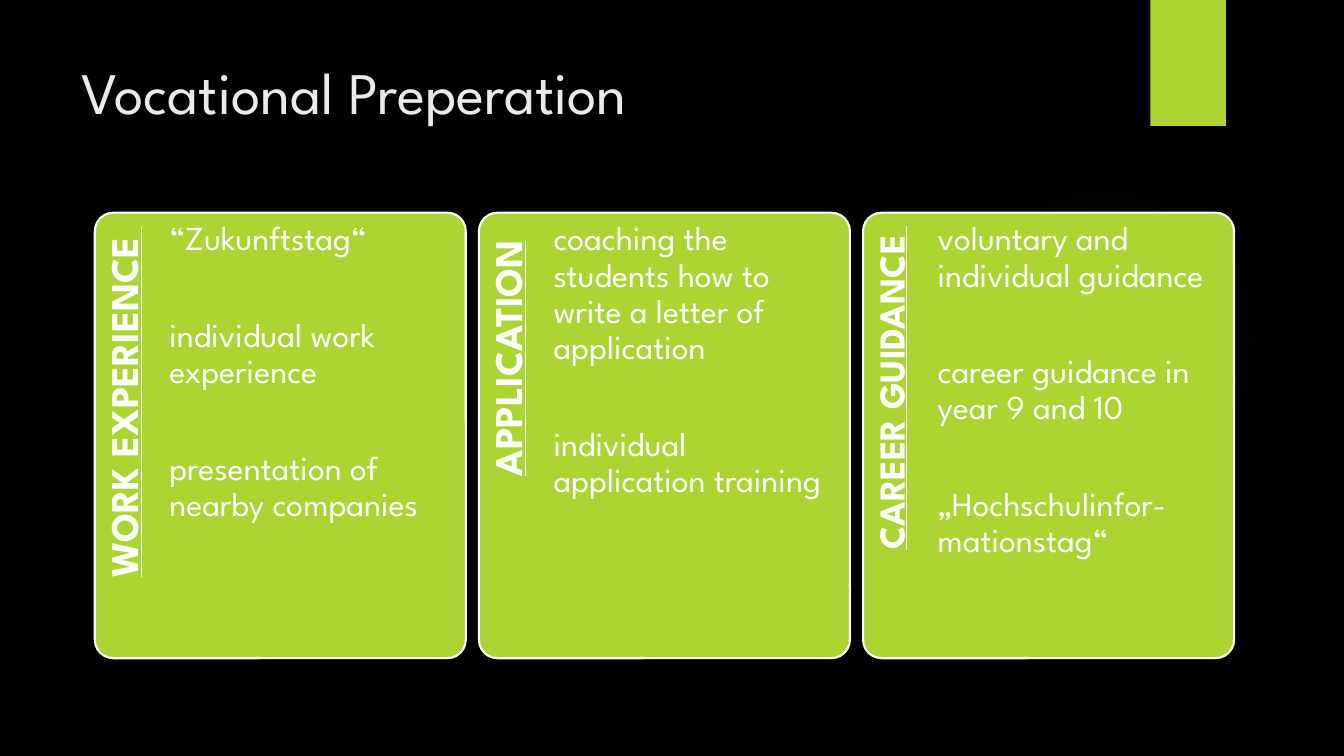
from pptx import Presentation
from pptx.dml.color import RGBColor
from pptx.enum.shapes import MSO_SHAPE as Shape
from pptx.enum.text import MSO_ANCHOR as Anchor, MSO_AUTO_SIZE as AutoSize, PP_ALIGN as Align
from pptx.oxml import parse_xml
from pptx.oxml.ns import nsdecls
from pptx.util import Inches, Pt

FONT = "League Spartan"
COLORS = {
    "background": "000000",
    "green": "ACD433",
    "white": "FFFFFF",
    "title": "EBEBEB",
    "glow": "7AC4F0",
}

# Card grid, in inches
GRID_LEFT, GRID_TOP = 0.94, 2.11
COLUMN_STEP = 3.81
CARD_WIDTH, CARD_HEIGHT = 3.68, 4.42
LABEL_LENGTH, LABEL_WIDTH = 3.62, 0.74
BODY_WIDTH = 2.74

# Heading, heading size, inset at the heading's end, entries
CARDS = [
    ("WORK EXPERIENCE ", 28, 0.14,
     ["“Zukunftstag“", "individual work experience", "presentation of nearby companies"]),
    ("APPLICATION", 28, 0.27,
     ["coaching the students how to write a letter of application",
      "individual application training"]),
    ("CAREER GUIDANCE ", 26, 0.13,
     ["voluntary and individual guidance", "career guidance in year 9 and 10",
      "„Hochschulinfor-mationstag“"]),
]


def color(name):
    return RGBColor.from_string(COLORS[name])


def write(shape, paragraphs, size, ink="white", insets=(0.1, 0.05, 0.1, 0.05),
          align=Align.LEFT, spacing=None, gap=0, bold=False, underline=False):
    """Fill a shape with paragraphs; insets run left, top, right, bottom."""
    frame = shape.text_frame
    frame.word_wrap = True
    frame.auto_size = AutoSize.NONE
    frame.vertical_anchor = Anchor.TOP
    (frame.margin_left, frame.margin_top,
     frame.margin_right, frame.margin_bottom) = map(Inches, insets)
    for index, text in enumerate(paragraphs):
        paragraph = frame.add_paragraph() if index else frame.paragraphs[0]
        paragraph.alignment = align
        paragraph.line_spacing = spacing
        paragraph.space_after = Pt(gap)
        run = paragraph.add_run()
        run.text = text
        font = run.font
        font.name, font.size = FONT, Pt(size)
        font.bold, font.underline = bold, underline
        font.color.rgb = color(ink)


def add_block(slide, kind, left, top, width, height, line=None):
    block = slide.shapes.add_shape(kind, *map(Inches, (left, top, width, height)))
    block.shadow.inherit = False
    block.fill.solid()
    block.fill.fore_color.rgb = color("green")
    if line:
        block.line.color.rgb = color(line)
        block.line.width = Pt(1.5)
    else:
        block.line.fill.background()
    return block


def add_text_box(slide, left, top, width, height, paragraphs, **text_format):
    box = slide.shapes.add_textbox(*map(Inches, (left, top, width, height)))
    write(box, paragraphs, **text_format)
    return box


def add_glow(slide):
    """Add a faint circle that fades out towards its edge."""
    glow = add_block(slide, Shape.OVAL, 9.41, 1.83, 3.08, 3.08)
    stops = "".join(
        f'<a:gs pos="{position * 1000}"><a:srgbClr val="{COLORS["glow"]}">'
        f'<a:alpha val="{alpha * 1000}"/></a:srgbClr></a:gs>'
        for position, alpha in [(0, 7), (36, 6), (69, 0), (100, 0)])
    gradient = parse_xml(
        f'<a:gradFill {nsdecls("a")}><a:gsLst>{stops}</a:gsLst><a:path path="circle">'
        '<a:fillToRect l="50000" t="50000" r="50000" b="50000"/></a:path></a:gradFill>')
    properties = glow.fill._xPr
    properties.replace(properties.solidFill, gradient)


def add_title(slide, text):
    title = slide.shapes.title
    title.left, title.top, title.width, title.height = map(Inches, (0.71, 0.5, 10.29, 1.53))
    write(title, [text], size=42, ink="title")


def add_card(slide, column, heading, heading_size, end_inset, entries):
    left = GRID_LEFT + column * COLUMN_STEP
    card = add_block(slide, Shape.ROUNDED_RECTANGLE, left, GRID_TOP,
                     CARD_WIDTH, CARD_HEIGHT, line="white")
    card.adjustments[0] = 0.05

    # The heading is laid out flat, then turned about its centre
    turn_shift = (LABEL_LENGTH - LABEL_WIDTH) / 2
    label = add_text_box(slide, left - turn_shift, GRID_TOP + turn_shift,
                         LABEL_LENGTH, LABEL_WIDTH, [heading], size=heading_size,
                         insets=(0, 0.1, end_inset, 0), align=Align.RIGHT,
                         spacing=0.9, bold=True, underline=True)
    label.rotation = 270

    add_text_box(slide, left + LABEL_WIDTH, GRID_TOP, BODY_WIDTH, CARD_HEIGHT, entries,
                 size=24, insets=(0, 0.09, 0, 0), spacing=0.9, gap=43)


def main():
    presentation = Presentation()
    presentation.slide_width, presentation.slide_height = Inches(13.33), Inches(7.5)
    slide = presentation.slides.add_slide(presentation.slide_layouts[5])
    slide.background.fill.solid()
    slide.background.fill.fore_color.rgb = color("background")

    add_glow(slide)
    add_block(slide, Shape.RECTANGLE, 11.41, 0, 0.75, 1.25)
    add_title(slide, "Vocational Preperation")
    for column, card in enumerate(CARDS):
        add_card(slide, column, *card)
    presentation.save("out.pptx")


if __name__ == "__main__":
    main()
